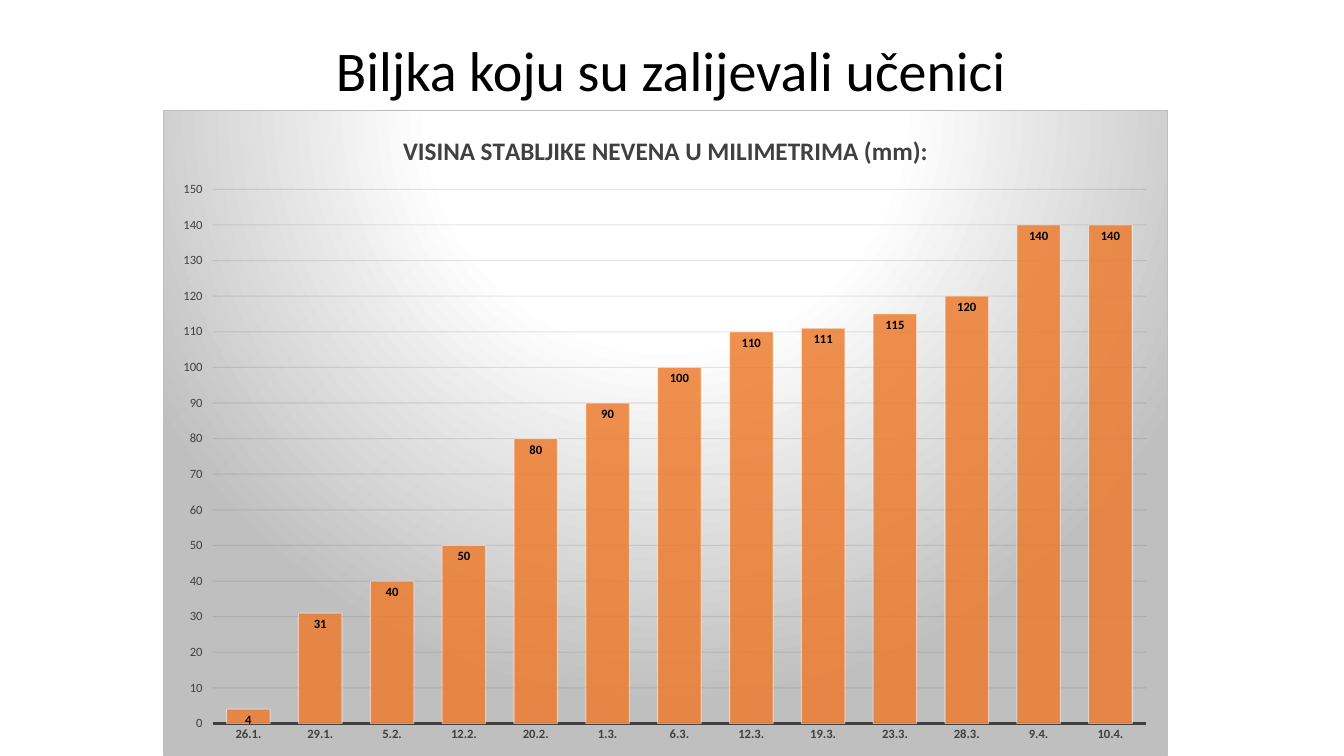
from pptx import Presentation
from pptx.chart.data import CategoryChartData
from pptx.dml.color import RGBColor
from pptx.enum.chart import XL_CHART_TYPE, XL_LABEL_POSITION, XL_TICK_MARK
from pptx.oxml import parse_xml
from pptx.oxml.ns import nsdecls, qn
from pptx.util import Emu, Pt

COLUMN_CLUSTERED = XL_CHART_TYPE.COLUMN_CLUSTERED
INSIDE_END = XL_LABEL_POSITION.INSIDE_END
TICK_NONE, TICK_OUTSIDE = XL_TICK_MARK.NONE, XL_TICK_MARK.OUTSIDE

BLACK = RGBColor(0x00, 0x00, 0x00)
WHITE = RGBColor(0xFF, 0xFF, 0xFF)
DARK_GREY = RGBColor(0x40, 0x40, 0x40)
GRID_GREY = RGBColor(0x0D, 0x0D, 0x0D)
ORANGE = RGBColor(0xED, 0x7D, 0x31)

PX = 914400 / 100.8
FONT = "Calibri"
HEIGHTS = {
    "26.1.": 4, "29.1.": 31, "5.2.": 40, "12.2.": 50, "20.2.": 80,
    "1.3.": 90, "6.3.": 100, "12.3.": 110, "19.3.": 111, "23.3.": 115,
    "28.3.": 120, "9.4.": 140, "10.4.": 140,
}


def px_box(*lengths):
    """Turn pixel lengths into EMU."""
    return [Emu(round(length * PX)) for length in lengths]


def set_alpha(parent, *percents):
    """Give the colours below parent, in order, these opacities."""
    for color, percent in zip(parent.iter(qn("a:srgbClr")), percents):
        color.append(parse_xml(f'<a:alpha {nsdecls("a")} val="{percent * 1000}"/>'))


presentation = Presentation()
presentation.slide_width, presentation.slide_height = px_box(1344, 756)
slide = presentation.slides.add_slide(presentation.slide_layouts[6])

# Heading
heading = slide.shapes.add_textbox(*px_box(326, 31, 799, 78))
heading.text_frame.word_wrap = True
heading.text_frame.text = "Biljka koju su zalijevali učenici"
heading_font = heading.text_frame.paragraphs[0].runs[0].font

# Chart
chart_data = CategoryChartData()
chart_data.categories = list(HEIGHTS)
chart_data.add_series("Series 1", list(HEIGHTS.values()))
chart = slide.shapes.add_chart(
    COLUMN_CLUSTERED, *px_box(163, 110, 1005, 646), chart_data).chart
chart.has_legend = False
chart.has_title = True
chart_title = chart.chart_title.text_frame
chart_title.text = "VISINA STABLJIKE NEVENA U MILIMETRIMA (mm):"

plot = chart.plots[0]
plot.gap_width = 65
plot.vary_by_categories = False
series = plot.series[0]
series.format.fill.solid()
series.format.fill.fore_color.rgb = ORANGE
labels = series.data_labels
labels.show_value = True
labels.position = INSIDE_END

date_axis, height_axis = chart.category_axis, chart.value_axis
date_axis.major_tick_mark = TICK_NONE
date_axis.has_major_gridlines = False
height_axis_format = {
    "minimum_scale": 0, "maximum_scale": 150, "major_unit": 10,
    "major_tick_mark": TICK_OUTSIDE, "has_major_gridlines": True,
}
for name, value in height_axis_format.items():
    setattr(height_axis, name, value)
height_axis.format.line.fill.background()

for line, color, width in [
    (date_axis.format.line, DARK_GREY, 1.5),
    (height_axis.major_gridlines.format.line, GRID_GREY, 0.75),
    (series.format.line, WHITE, 0.75),
]:
    line.color.rgb = color
    line.width = Pt(width)

for font, size, bold, color in [
    (heading_font, 40, False, BLACK),
    (chart.font, 10, False, WHITE),
    (chart_title.paragraphs[0].runs[0].font, 18, True, DARK_GREY),
    (date_axis.tick_labels.font, 9, True, DARK_GREY),
    (height_axis.tick_labels.font, 9, False, DARK_GREY),
    (labels.font, 9, True, BLACK),
]:
    for name, value in {"name": FONT, "size": Pt(size), "bold": bold}.items():
        setattr(font, name, value)
    font.color.rgb = color

# Opacity, plot position and chart background
chart_space = chart.element if hasattr(chart, "element") else chart._chartSpace
set_alpha(chart_space.find(".//" + qn("c:ser")).find(qn("c:spPr")), 85, 50)
set_alpha(chart_space.find(".//" + qn("c:majorGridlines")), 10)

plot_area = chart_space.find(".//" + qn("c:plotArea"))
for layout in plot_area.findall(qn("c:layout")):
    plot_area.remove(layout)
plot_area.insert(0, parse_xml(f"""
<c:layout {nsdecls("c")}><c:manualLayout>
  <c:layoutTarget val="inner"/><c:xMode val="edge"/><c:yMode val="edge"/>
  <c:x val="{49 / 1005:.4f}"/><c:y val="{79 / 646:.4f}"/>
  <c:w val="{935 / 1005:.4f}"/><c:h val="{535 / 646:.4f}"/>
</c:manualLayout></c:layout>"""))

chart_space.find(qn("c:chart")).addnext(parse_xml(f"""
<c:spPr {nsdecls("c", "a")}>
  <a:gradFill>
    <a:gsLst>
      <a:gs pos="0"><a:srgbClr val="FFFFFF"/></a:gs>
      <a:gs pos="39000"><a:srgbClr val="FFFFFF"/></a:gs>
      <a:gs pos="100000"><a:srgbClr val="BFBFBF"/></a:gs>
    </a:gsLst>
    <a:path path="circle">
      <a:fillToRect l="50000" t="-80000" r="50000" b="180000"/>
    </a:path>
  </a:gradFill>
  <a:ln w="9525"><a:solidFill><a:srgbClr val="BFBFBF"/></a:solidFill></a:ln>
</c:spPr>"""))

presentation.save("out.pptx")
